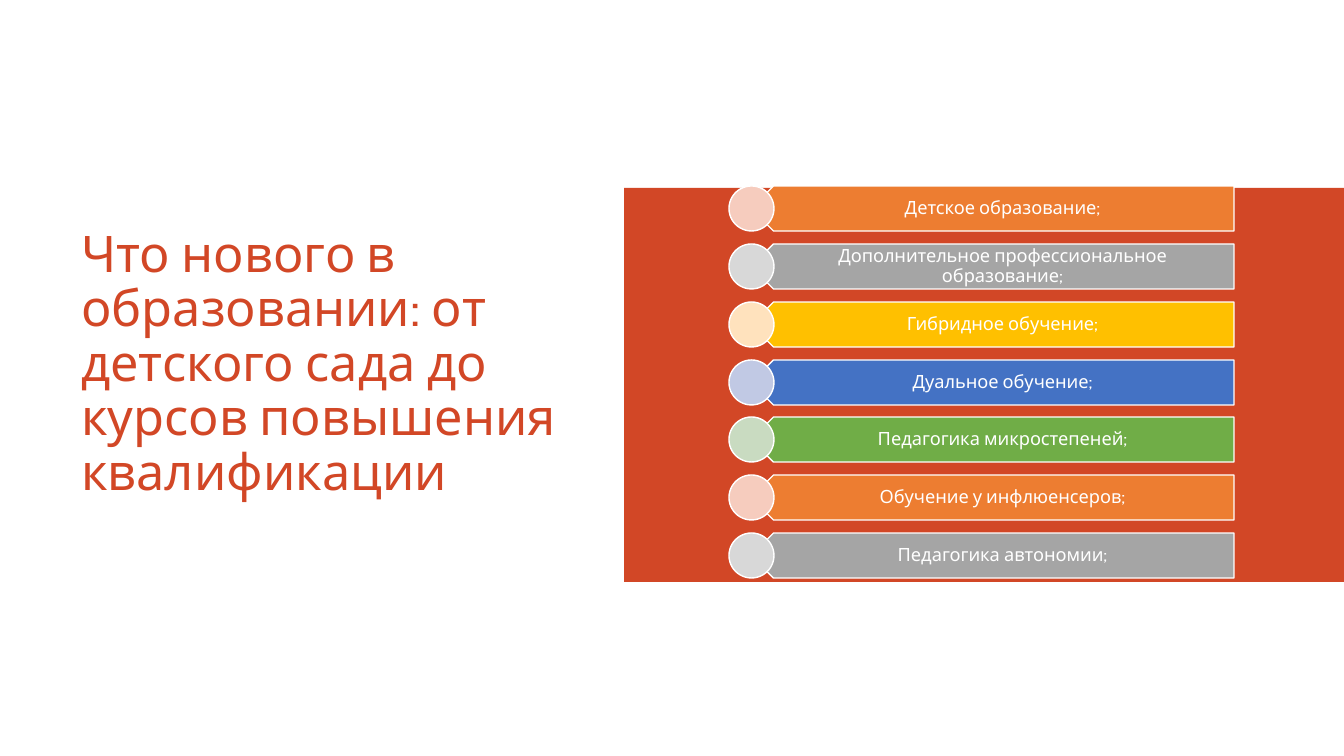
from pptx import Presentation
from pptx.dml.color import RGBColor
from pptx.enum.shapes import MSO_SHAPE
from pptx.enum.text import MSO_ANCHOR, PP_ALIGN
from pptx.util import Emu, Pt

EMU_PER_PX = 914400 / 100.8
FONT = "Cabin"
COLORS = {
    "white": "FFFFFF", "red": "D24726",
    "orange": "ED7D31", "pale orange": "F6CCBE",
    "gray": "A5A5A5", "pale gray": "D8D8D8",
    "yellow": "FFC000", "pale yellow": "FFE2BD",
    "blue": "4472C4", "pale blue": "C1C9E4",
    "green": "70AD47", "pale green": "C9DBC1",
}
TOPICS = [
    ("Детское образование;", "orange"),
    ("Дополнительное профессиональное образование;", "gray"),
    ("Гибридное обучение;", "yellow"),
    ("Дуальное обучение;", "blue"),
    ("Педагогика микростепеней;", "green"),
    ("Обучение у инфлюенсеров;", "orange"),
    ("Педагогика автономии;", "gray"),
]


def px(length):
    """Turn pixels into EMU."""
    return Emu(round(length * EMU_PER_PX))


def color(name):
    """Look up a colour by its name."""
    return RGBColor.from_string(COLORS[name])


def add_block(page, kind, box, fill, outlined=True):
    """Add a filled shape, with a thin white outline if wanted."""
    block = page.shapes.add_shape(kind, *map(px, box))
    block.shadow.inherit = False
    block.fill.solid()
    block.fill.fore_color.rgb = color(fill)
    if outlined:
        block.line.color.rgb = color("white")
        block.line.width = Pt(1)
    else:
        block.line.fill.background()
    return block


def write(frame, text, size, ink, align):
    """Write one vertically centred paragraph into a text frame."""
    frame.word_wrap = True
    frame.vertical_anchor = MSO_ANCHOR.MIDDLE
    para = frame.paragraphs[0]
    para.text = text
    para.alignment = align
    para.line_spacing = 0.9
    para.font.size = Pt(size)
    para.font.name = FONT
    para.font.color.rgb = color(ink)


def place_title(page, box, text):
    """Move the title placeholder into the box and format it."""
    title = page.shapes.title
    title.left, title.top, title.width, title.height = map(px, box)
    write(title.text_frame, text, 36, "red", PP_ALIGN.LEFT)


def add_topic(page, box, text, hue):
    """Add one row: a pointed bar, its label and a circle at the point."""
    left, top, width, height = box
    bar_left = left + height // 2
    label_left = bar_left + height // 4
    right = left + width
    bar = add_block(page, MSO_SHAPE.PENTAGON,
                    (bar_left, top, right - bar_left, height), hue)
    bar.rotation = 180
    label = page.shapes.add_textbox(
        *map(px, (label_left, top, right - label_left, height)))
    frame = label.text_frame
    frame.margin_left, frame.margin_right = px(19), px(10)
    frame.margin_top = frame.margin_bottom = px(5)
    write(frame, text, 13, "white", PP_ALIGN.CENTER)
    add_block(page, MSO_SHAPE.OVAL, (left, top, height, height), f"pale {hue}")


def add_topic_list(page, box, topics, row_height):
    """Spread the topic rows evenly over the height of the box."""
    left, top, width, height = box
    step = (height - row_height) / (len(topics) - 1)
    for index, (text, hue) in enumerate(topics):
        row = (left, top + round(index * step), width, row_height)
        add_topic(page, row, text, hue)


def main():
    """Build the deck and save it."""
    deck = Presentation()
    deck.slide_width, deck.slide_height = px(1344), px(756)
    page = deck.slides.add_slide(deck.slide_layouts[5])
    add_block(page, MSO_SHAPE.RECTANGLE, (624, 188, 720, 394), "red", False)
    place_title(page, (71, 167, 502, 396),
                "Что нового в образовании: от детского сада "
                "до курсов повышения квалификации")
    add_topic_list(page, (729, 186, 505, 392), TOPICS, 45)
    deck.save("out.pptx")


if __name__ == "__main__":
    main()
